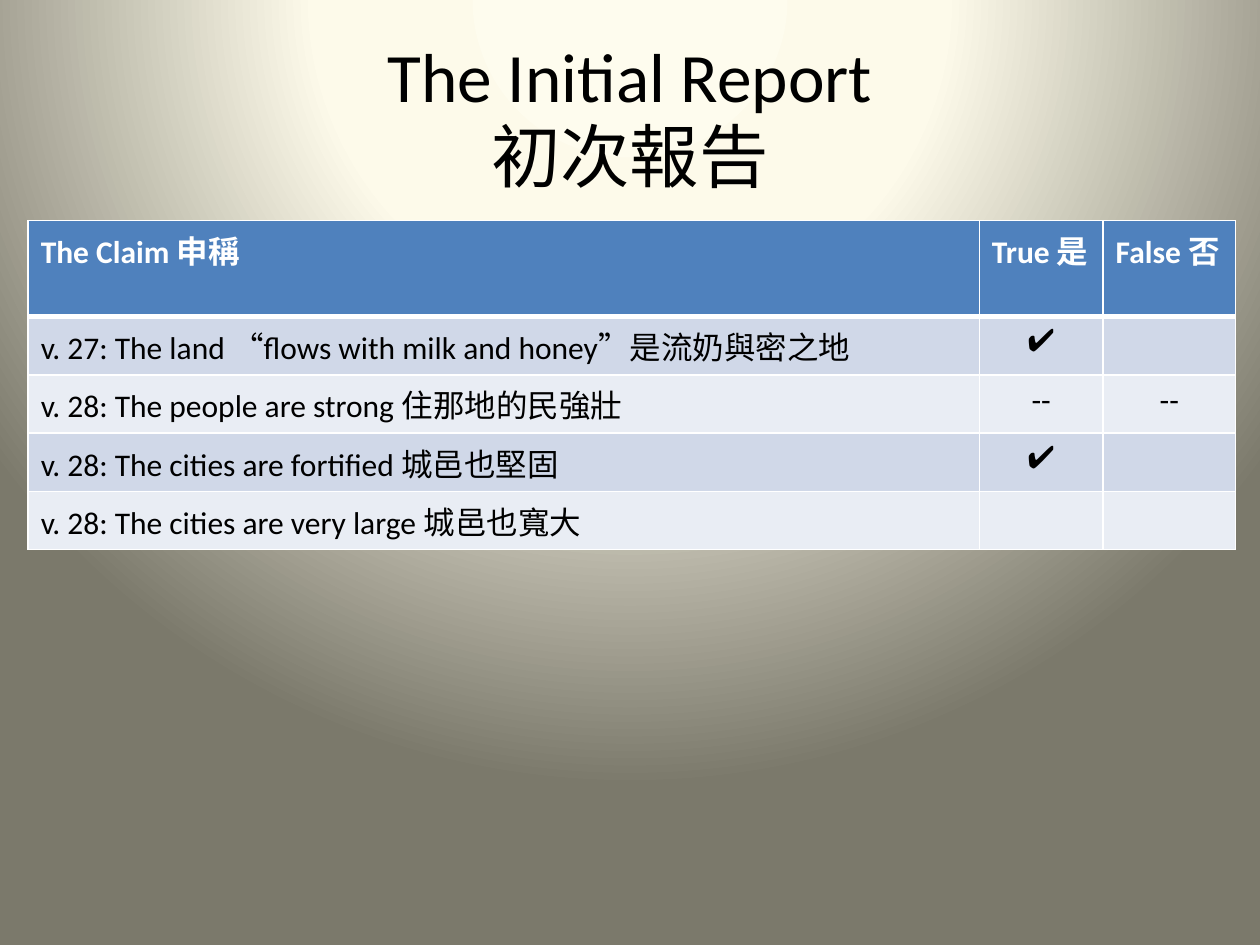
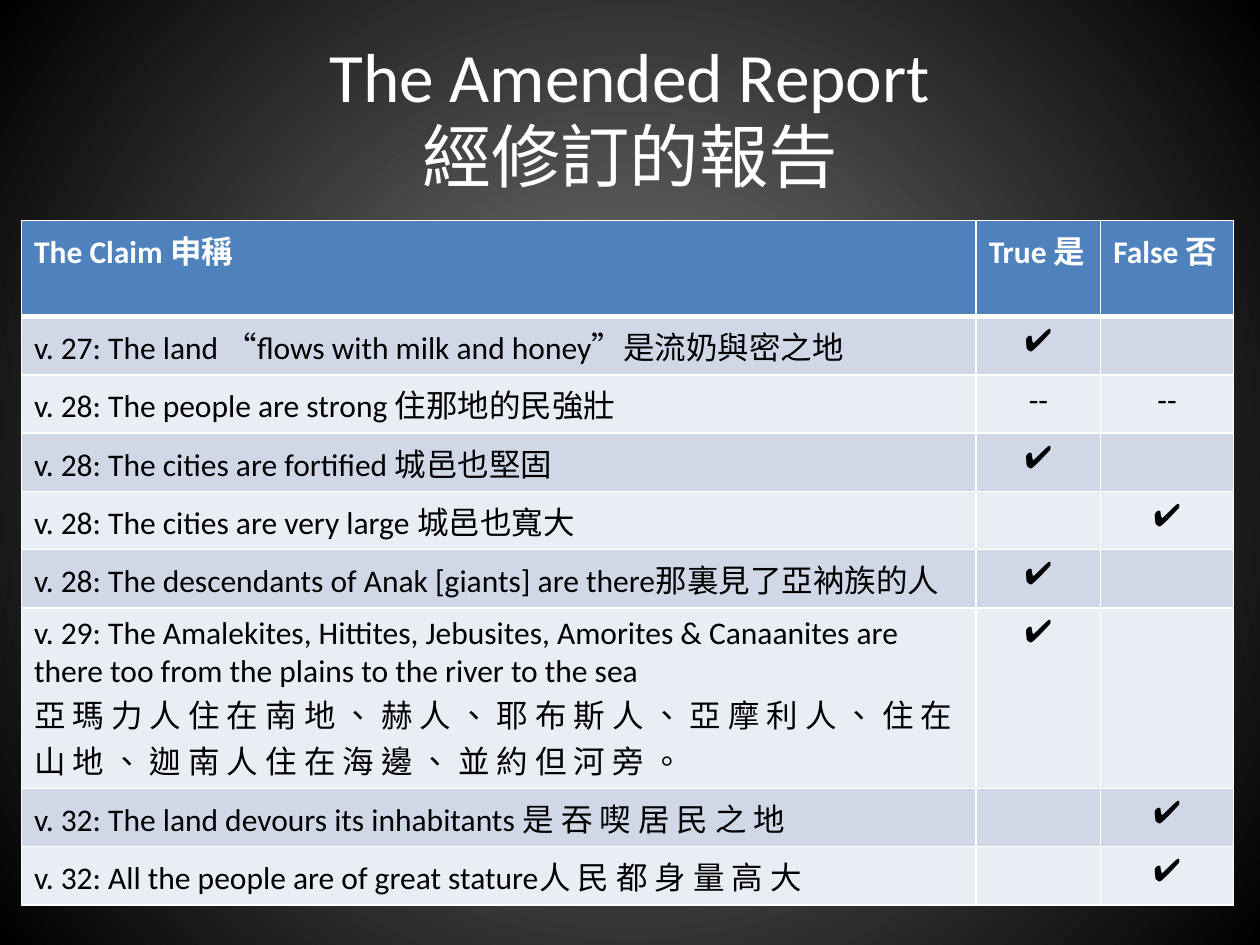
"""Build two slides that weigh the claims of the initial and amended reports."""
from dataclasses import dataclass

from lxml import etree
from pptx import Presentation
from pptx import util as u
from pptx.dml import color as dml
from pptx.enum import text
from pptx.oxml import ns

BODY_FONT, MARK_FONT = "Calibri", "Arial"
BLACK, WHITE = "000000", "FFFFFF"
HEADER_FILL = "4F81BD"
BAND_FILLS = ("D0D8E8", "E9EDF4")
TITLE_SIZE, TABLE_SIZE = 39.6, 18
TABLE_TOP = 126
HEADER_HEIGHT, ROW_HEIGHT, TALL_ROW_HEIGHT = 55, 33.3, 103.1
CHECK, UNSURE = "✔", "--"

HEADER = ("The Claim 申稱", "True 是", "False 否")
SHARED_CLAIMS = (
    ("v. 27: The land “flows with milk and honey”是流奶與密之地", CHECK, ""),
    ("v. 28: The people are strong 住那地的民強壯", UNSURE, UNSURE),
    ("v. 28: The cities are fortified 城邑也堅固", CHECK, ""),
)
LARGE_CITIES = "v. 28: The cities are very large 城邑也寬大"
AMENDED_CLAIMS = (
    ("v. 28: The descendants of Anak [giants] are there那裏見了亞衲族的人", CHECK, ""),
    ("v. 29: The Amalekites, Hittites, Jebusites, Amorites & Canaanites are there too "
     "from the plains to the river to the sea\n"
     "亞 瑪 力 人 住 在 南 地 、 赫 人 、 耶 布 斯 人 、 亞 摩 利 人 、 住 在 山 地 、 "
     "迦 南 人 住 在 海 邊 、 並 約 但 河 旁 。", CHECK, ""),
    ("v. 32: The land devours its inhabitants 是 吞 喫 居 民 之 地", "", CHECK),
    ("v. 32: All the people are of great stature人 民 都 身 量 高 大", "", CHECK),
)


@dataclass(frozen=True)
class Glow:
    """A circular background gradient and its focus rectangle in percent."""

    stops: tuple[tuple[int, str], ...]
    focus: tuple[int, int, int, int]


@dataclass(frozen=True)
class Report:
    """One report slide: title, background and table of claims."""

    title: str
    title_color: str
    glow: Glow
    table_left: float
    column_widths: tuple[float, ...]
    claims: tuple[tuple[str, str, str], ...]


REPORTS = (
    Report("The Initial Report\v初次報告", BLACK,
           Glow(((0, "FEFCEE"), (40, "FDFAEA"), (100, "7B796B")), (50, -80, 50, 180)),
           16.1, (543.5, 70.8, 75.6),
           SHARED_CLAIMS + ((LARGE_CITIES, "", ""),)),
    Report("The Amended Report\v經修訂的報告", WHITE,
           Glow(((0, "7F7F7F"), (100, BLACK)), (50, 50, 50, 50)),
           12.3, (545.5, 71.2, 75.9),
           SHARED_CLAIMS + ((LARGE_CITIES, "", CHECK),) + AMENDED_CLAIMS),
)


def rgb(value: str) -> dml.RGBColor:
    """Turn a hex string into a colour."""
    return dml.RGBColor.from_string(value)


def style_text(frame, size: float, color: str, bold: bool = False) -> None:
    """Format every run, with a font for check marks and a language for Chinese lines."""
    for paragraph in frame.paragraphs:
        for span in paragraph.runs:
            font = span.font
            font.name = MARK_FONT if span.text == CHECK else BODY_FONT
            font.size, font.bold = u.Pt(size), bold
            font.color.rgb = rgb(color)
            if "、" in span.text:
                span._r.get_or_add_rPr().set("lang", "zh-TW")


def paint_background(page, glow: Glow) -> None:
    """Fill the page with a circular gradient."""
    page.background.fill.gradient()
    gradient = page.element.find(".//" + ns.qn("a:gradFill"))
    for child in list(gradient):
        gradient.remove(child)
    stops = etree.SubElement(gradient, ns.qn("a:gsLst"))
    for position, color in glow.stops:
        stop = etree.SubElement(stops, ns.qn("a:gs"), pos=str(position * 1000))
        etree.SubElement(stop, ns.qn("a:srgbClr"), val=color)
    circle = etree.SubElement(gradient, ns.qn("a:path"), path="circle")
    edges = {side: str(value * 1000) for side, value in zip("ltrb", glow.focus)}
    etree.SubElement(circle, ns.qn("a:fillToRect"), edges)


def add_title(page, title: str, color: str) -> None:
    """Add the centred two-language title."""
    box = page.shapes.add_textbox(u.Pt(36), u.Pt(21.6), u.Pt(648), u.Pt(90))
    frame = box.text_frame
    frame.word_wrap = True
    frame.vertical_anchor = text.MSO_ANCHOR.TOP
    frame.margin_top = u.Pt(0)
    frame.text = title
    frame.paragraphs[0].alignment = text.PP_ALIGN.CENTER
    frame.paragraphs[0].line_spacing = 0.97
    style_text(frame, TITLE_SIZE, color)


def set_borders(cell, top: float, bottom: float) -> None:
    """Draw white cell borders, placed ahead of the cell fill."""
    properties = cell._tc.get_or_add_tcPr()
    widths = {"a:lnL": 1, "a:lnR": 1, "a:lnT": top, "a:lnB": bottom}
    for index, (tag, width) in enumerate(widths.items()):
        line = etree.Element(ns.qn(tag), w=str(u.Pt(width)))
        fill = etree.SubElement(line, ns.qn("a:solidFill"))
        etree.SubElement(fill, ns.qn("a:srgbClr"), val=WHITE)
        properties.insert(index, line)


def row_height(row: tuple[str, str, str]) -> float:
    """Return the height that suits the text of a row."""
    if row == HEADER:
        return HEADER_HEIGHT
    return TALL_ROW_HEIGHT if "\n" in row[0] else ROW_HEIGHT


def add_claims(page, report: Report) -> None:
    """Add the table of claims with its header and banded rows."""
    rows = (HEADER,) + report.claims
    heights = [row_height(row) for row in rows]
    table = page.shapes.add_table(
        len(rows), len(HEADER), u.Pt(report.table_left), u.Pt(TABLE_TOP),
        u.Pt(sum(report.column_widths)), u.Pt(sum(heights))).table
    for column, width in zip(table.columns, report.column_widths):
        column.width = u.Pt(width)
    for row_index, row in enumerate(rows):
        is_header = row_index == 0
        table.rows[row_index].height = u.Pt(heights[row_index])
        for column_index, content in enumerate(row):
            cell = table.cell(row_index, column_index)
            cell.text_frame.text = content
            cell.fill.solid()
            cell.fill.fore_color.rgb = rgb(
                HEADER_FILL if is_header else BAND_FILLS[(row_index - 1) % 2])
            set_borders(cell, 3 if row_index == 1 else 1, 3 if is_header else 1)
            if column_index and not is_header:
                cell.text_frame.paragraphs[0].alignment = text.PP_ALIGN.CENTER
            style_text(cell.text_frame, TABLE_SIZE, WHITE if is_header else BLACK, is_header)


def main() -> None:
    """Build and save the deck."""
    deck = Presentation()
    deck.slide_width, deck.slide_height = u.Pt(720), u.Pt(540)
    for report in REPORTS:
        page = deck.slides.add_slide(deck.slide_layouts[6])
        paint_background(page, report.glow)
        add_title(page, report.title, report.title_color)
        add_claims(page, report)
    deck.save("out.pptx")


if __name__ == "__main__":
    main()
